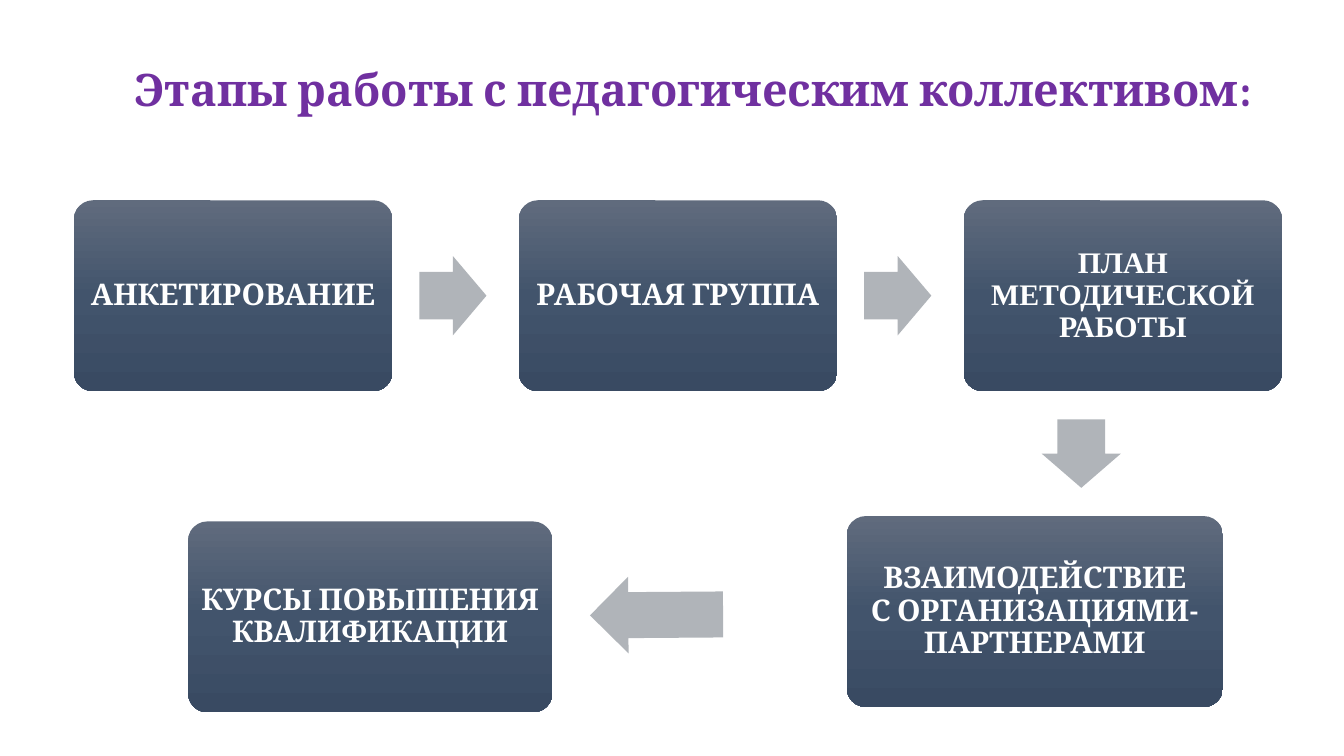
"""Build a slide showing the stages of work with the teaching staff."""
from copy import deepcopy
from dataclasses import dataclass

from pptx import Presentation, util as u
from pptx.dml.color import RGBColor
from pptx.enum import shapes, text
from pptx.oxml.ns import qn


@dataclass(frozen=True)
class Theme:
    title: str = "7030A0"
    label: str = "FFFFFF"
    arrow: str = "B0B4B9"
    gradient: tuple = ((0, "606B7D"), (0.5, "42546C"), (1, "394A62"))
    heading_font: str = "Cambria"
    plan_font: str = "Times New Roman"
    title_size: int = 24
    label_size: int = 16


THEME = Theme()
TITLE = "Этапы работы с педагогическим коллективом:"
TOP_STAGES = [
    ("АНКЕТИРОВАНИЕ", THEME.heading_font),
    ("РАБОЧАЯ ГРУППА", THEME.heading_font),
    ("ПЛАН МЕТОДИЧЕСКОЙ РАБОТЫ", THEME.plan_font),
]
BOTTOM_STAGES = [
    ("ВЗАИМОДЕЙСТВИЕ\vС ОРГАНИЗАЦИЯМИ-ПАРТНЕРАМИ", 6.3, 3.84, 2.8),
    ("КУРСЬI ПОВЬIШЕНИЯ КВАЛИФИКАЦИИ", 1.4, 3.88, 2.71),
]
LEFT, TOP, CARD_WIDTH, CARD_HEIGHT, PITCH = 0.55, 1.49, 2.37, 1.42, 3.31
CARD_MARGIN = 0.03
ARROW_GAP, ARROW_LENGTH, ARROW_WIDTH = 0.2, 0.5, 0.59
TURN_ARROWS = [(7.79, 3.08, 0.51, 0.59, 90), (4.39, 4.29, 0.99, 0.57, 179.6)]


def format_text(frame, font_name, size, color):
    for paragraph in frame.paragraphs:
        paragraph.alignment = text.PP_ALIGN.CENTER
        for run in paragraph.runs:
            run.font.name = font_name
            run.font.size = u.Pt(size)
            run.font.bold = True
            run.font.color.rgb = RGBColor.from_string(color)


def add_plain_shape(slide, kind, *box):
    shape = slide.shapes.add_shape(kind, *map(u.Inches, box))
    shape.shadow.inherit = False
    shape.line.fill.background()
    return shape


def fill_gradient(shape):
    shape.fill.gradient()
    shape.fill.gradient_angle = 270
    stop_list = shape._element.spPr.find(qn("a:gradFill")).find(qn("a:gsLst"))
    stop_list.insert(1, deepcopy(stop_list[0]))
    for stop, (position, color) in zip(shape.fill.gradient_stops, THEME.gradient):
        stop.position = position
        stop.color.rgb = RGBColor.from_string(color)


def add_card(slide, label, font_name, left, top, width):
    card = add_plain_shape(slide, shapes.MSO_SHAPE.ROUNDED_RECTANGLE, left, top, width, CARD_HEIGHT)
    card.adjustments[0] = 0.1
    fill_gradient(card)
    frame = card.text_frame
    frame.word_wrap = True
    frame.vertical_anchor = text.MSO_ANCHOR.MIDDLE
    frame.margin_left = frame.margin_right = u.Inches(CARD_MARGIN)
    frame.margin_top = frame.margin_bottom = u.Inches(CARD_MARGIN)
    paragraph = frame.paragraphs[0]
    paragraph.text = label
    paragraph.line_spacing = 0.9
    format_text(frame, font_name, THEME.label_size, THEME.label)


def add_arrow(slide, left, top, length, width, rotation=0):
    arrow = add_plain_shape(slide, shapes.MSO_SHAPE.RIGHT_ARROW, left, top, length, width)
    arrow.adjustments[0], arrow.adjustments[1] = 0.6, 0.5
    arrow.rotation = rotation
    arrow.fill.solid()
    arrow.fill.fore_color.rgb = RGBColor.from_string(THEME.arrow)


def add_title(slide):
    title = slide.shapes.title
    title.left, title.top, title.width, title.height = map(u.Inches, (0.68, 0.41, 8.95, 0.5))
    frame = title.text_frame
    frame.text = TITLE
    frame.word_wrap = False
    frame.auto_size = text.MSO_AUTO_SIZE.SHAPE_TO_FIT_TEXT
    frame.vertical_anchor = text.MSO_ANCHOR.TOP
    format_text(frame, THEME.heading_font, THEME.title_size, THEME.title)


def main():
    presentation = Presentation()
    presentation.slide_width = u.Inches(10)
    presentation.slide_height = presentation.slide_width * 9 // 16
    slide = presentation.slides.add_slide(presentation.slide_layouts[5])
    add_title(slide)
    for column, (label, font_name) in enumerate(TOP_STAGES):
        left = LEFT + column * PITCH
        add_card(slide, label, font_name, left, TOP, CARD_WIDTH)
        if column < len(TOP_STAGES) - 1:
            arrow_top = TOP + (CARD_HEIGHT - ARROW_WIDTH) / 2
            add_arrow(slide, left + CARD_WIDTH + ARROW_GAP, arrow_top, ARROW_LENGTH, ARROW_WIDTH)
    for label, left, top, width in BOTTOM_STAGES:
        add_card(slide, label, THEME.heading_font, left, top, width)
    for arrow in TURN_ARROWS:
        add_arrow(slide, *arrow)
    presentation.save("out.pptx")


if __name__ == "__main__":
    main()
